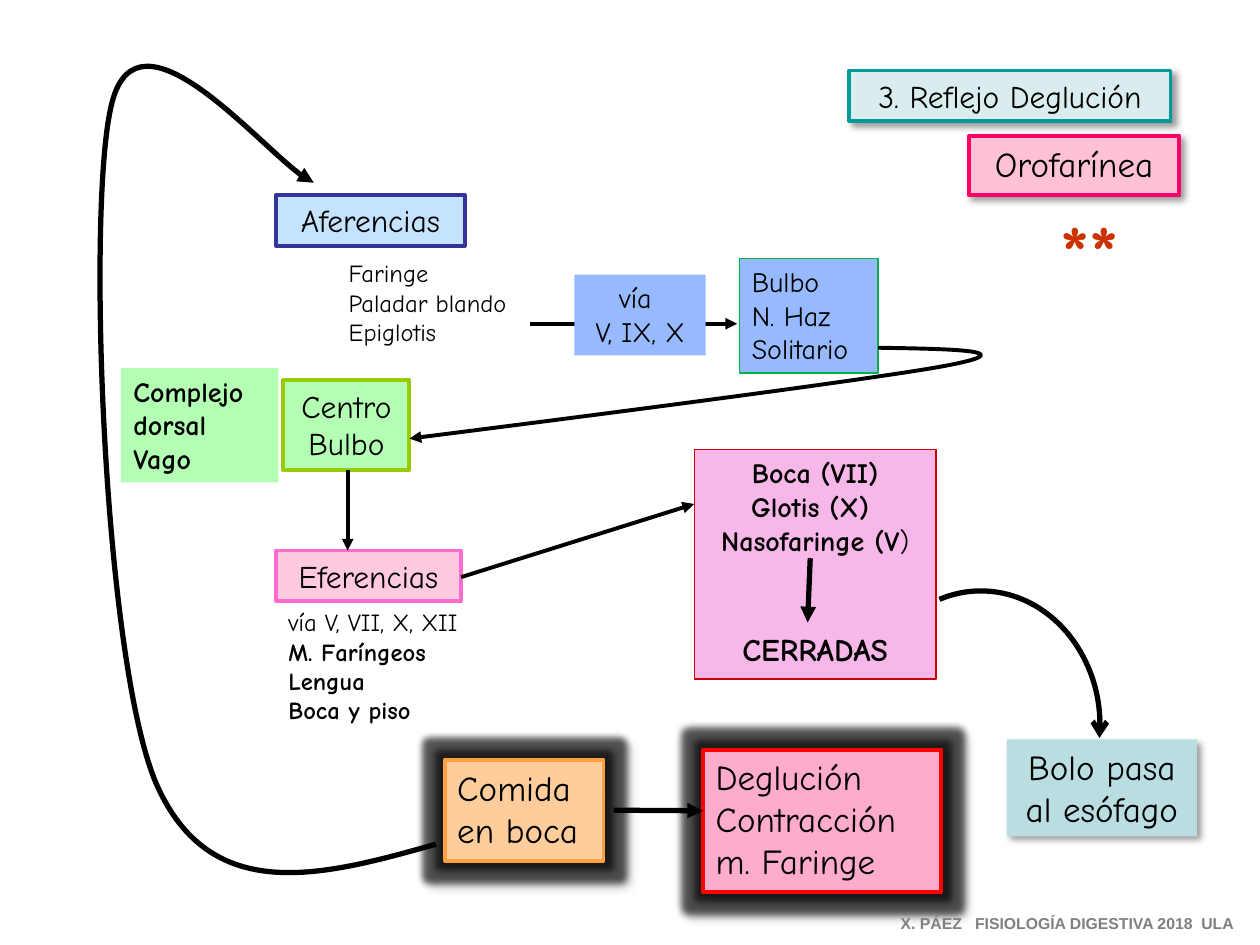
import pptx
import pptx.dml.color
import pptx.enum.dml
import pptx.enum.shapes
import pptx.enum.text
import pptx.oxml
import pptx.oxml.ns
import pptx.util

Pt = pptx.util.Pt
RGBColor = pptx.dml.color.RGBColor
qn = pptx.oxml.ns.qn
SHAPES = pptx.enum.shapes.MSO_SHAPE
LEFT = pptx.enum.text.PP_ALIGN.LEFT
CENTER = pptx.enum.text.PP_ALIGN.CENTER

BLACK = RGBColor(0x00, 0x00, 0x00)
GRAY = RGBColor(0x80, 0x80, 0x80)
RED = RGBColor(0xFF, 0x00, 0x00)
DARK_RED = RGBColor(0xCC, 0x00, 0x00)
BRICK = RGBColor(0xCC, 0x33, 0x00)
TEAL = RGBColor(0x00, 0x99, 0x99)
PALE_TEAL = RGBColor(0xD9, 0xED, 0xEF)
AQUA = RGBColor(0xBA, 0xDD, 0xE1)
NAVY = RGBColor(0x33, 0x33, 0x99)
PALE_BLUE = RGBColor(0xC5, 0xE2, 0xFF)
BLUE = RGBColor(0x97, 0xBA, 0xFF)
GREEN = RGBColor(0x00, 0xB0, 0x50)
LIME = RGBColor(0x99, 0xCC, 0x00)
PALE_GREEN = RGBColor(0xB3, 0xFF, 0xB3)
ORANGE = RGBColor(0xFF, 0xA1, 0x43)
PALE_ORANGE = RGBColor(0xFF, 0xCD, 0x9B)
MAGENTA = RGBColor(0xFF, 0x00, 0x66)
ROSE = RGBColor(0xFF, 0xC1, 0xD6)
ORCHID = RGBColor(0xFF, 0x6B, 0xCE)
PALE_PINK = RGBColor(0xFF, 0xC9, 0xDF)
PINK = RGBColor(0xFF, 0xAB, 0xCD)
LILAC = RGBColor(0xF7, 0xB7, 0xE9)

NAMESPACE = 'xmlns:a="http://schemas.openxmlformats.org/drawingml/2006/main"'
SHADOW = (f'<a:outerShdw {NAMESPACE} blurRad="50800" dist="38100" dir="2700000">'
          '<a:srgbClr val="000000"><a:alpha val="40000"/></a:srgbClr></a:outerShdw>')
GLOW = (f'<a:glow {NAMESPACE} rad="101600"><a:srgbClr val="000000">'
        '<a:alpha val="60000"/></a:srgbClr></a:glow>')
TEXT_SHADOW = (f'<a:effectLst {NAMESPACE}><a:outerShdw blurRad="38100" dist="38100" '
               'dir="2700000"><a:srgbClr val="000000"/></a:outerShdw></a:effectLst>')

presentation = pptx.Presentation()
presentation.slide_width = Pt(720)
presentation.slide_height = Pt(540)
slide = presentation.slides.add_slide(presentation.slide_layouts[6])


def add_text(text, place, size, align=CENTER, fill=None, line=None, width=2.25,
             effects=(), wrap=False, bold_from=None, color=BLACK, font="Comic Neue"):
    """Add a box; lines of text from number bold_from on are bold."""
    place = [Pt(length) for length in place]
    if fill is None:
        shape = slide.shapes.add_textbox(*place)
    else:
        shape = slide.shapes.add_shape(SHAPES.RECTANGLE, *place)
        shape.shadow.inherit = False
        shape.fill.solid()
        shape.fill.fore_color.rgb = fill
        if line is None:
            shape.line.fill.background()
        else:
            shape.line.color.rgb = line
            shape.line.width = Pt(width)
        effect_list = shape._element.spPr.find(qn("a:effectLst"))
        for effect in effects:
            effect_list.append(pptx.oxml.parse_xml(effect))
    frame = shape.text_frame
    frame.word_wrap = wrap
    frame.auto_size = pptx.enum.text.MSO_AUTO_SIZE.SHAPE_TO_FIT_TEXT
    frame.vertical_anchor = pptx.enum.text.MSO_ANCHOR.TOP
    for number, words in enumerate(text.split("\n")):
        paragraph = frame.paragraphs[0] if number == 0 else frame.add_paragraph()
        paragraph.alignment = align
        run = paragraph.add_run()
        run.text = words
        run.font.size = Pt(size)
        run.font.name = font
        run.font.bold = bold_from is not None and number >= bold_from
        run.font.color.rgb = color
    return shape


def style_arrow(shape, width, head="triangle"):
    """Give a line, curve or arc a black stroke with a head at its end."""
    shape.line.color.rgb = BLACK
    shape.line.width = Pt(width)
    shape.line._get_or_add_ln().append(
        pptx.oxml.parse_xml(f'<a:tailEnd {NAMESPACE} type="{head}"/>'))
    properties = shape._element.spPr
    if properties.find(qn("a:effectLst")) is None:
        properties.append(pptx.oxml.parse_xml(f"<a:effectLst {NAMESPACE}/>"))


# Titles
add_text("3. Reflejo Deglución", (485.3, 40.3, 183.6, 28.8), 18,
         fill=PALE_TEAL, line=TEAL, effects=[SHADOW])
add_text("Orofarínea", (553.7, 77.8, 120.2, 33.8), 20,
         fill=ROSE, line=MAGENTA, effects=[SHADOW])
stars = add_text("**", (581.8, 113, 81.4, 60.5), 44, wrap=True, bold_from=0, color=BRICK)
star_font = stars.text_frame.paragraphs[0].runs[0]._r.rPr
star_font.find(qn("a:solidFill")).addnext(pptx.oxml.parse_xml(TEXT_SHADOW))

# Afferent side
add_text("Aferencias", (157.7, 111.6, 108, 28.8), 18, fill=PALE_BLUE, line=NAVY)
add_text("Faringe\nPaladar blando\nEpiglotis", (192.2, 144, 109.4, 58.3), 14, align=LEFT)
add_text("Bulbo\nN. Haz Solitario", (422.6, 147.6, 79.2, 65.5), 16, align=LEFT,
         fill=BLUE, line=GREEN, width=0.75, wrap=True)

# Centre
add_text("Complejo\ndorsal\nVago", (69.1, 210.2, 90, 65.5), 16, align=LEFT,
         fill=PALE_GREEN, bold_from=0)
add_text("Centro\nBulbo", (162, 217.4, 72, 51.1), 18, fill=PALE_GREEN, line=LIME)

# Efferent side
add_text("Eferencias", (157.7, 314.6, 105.8, 28.8), 18, fill=PALE_PINK, line=ORCHID)
add_text("vía V, VII, X, XII\nM. Faríngeos\nLengua\nBoca y piso",
         (157.7, 343.4, 129.6, 74.2), 14, align=LEFT, bold_from=1)

# Closed passages
closed = add_text("Boca (VII)\nGlotis (X) \nNasofaringe (V\nCERRADAS",
                  (396.7, 257, 138.2, 131), 16, fill=LILAC, line=DARK_RED,
                  width=0.75, bold_from=0)
nasopharynx, result = closed.text_frame.paragraphs[2:]
bracket = nasopharynx.add_run()
bracket.text = ")"
bracket.font.size = Pt(16)
bracket.font.name = "Comic Neue"
bracket.font.color.rgb = BLACK
result.space_before = Pt(42)
result.runs[0].font.size = Pt(18)

# Swallowing
add_text("Comida\nen boca", (254.2, 434.2, 90.7, 57.6), 20, align=LEFT, wrap=True,
         fill=PALE_ORANGE, line=ORANGE, effects=[GLOW, SHADOW])
add_text("Deglución\nContracción\nm. Faringe", (401.8, 428.4, 136.1, 81.4), 20,
         align=LEFT, wrap=True, fill=PINK, line=RED, effects=[GLOW, SHADOW])
add_text("Bolo pasa\nal esófago", (575.3, 422.6, 108.7, 55.4), 20,
         fill=AQUA, effects=[SHADOW])

# Straight arrows: start, end, width
for start_x, start_y, end_x, end_y, width in [
    (463, 319, 461.5, 355.7, 3),
    (350.6, 463, 401.8, 463.3, 3),
    (198.7, 268.5, 198.7, 314.6, 2.25),
    (303.1, 185, 421.2, 185, 2.25),
    (263.5, 329.8, 396.7, 288, 2.25),
]:
    arrow = slide.shapes.add_connector(
        pptx.enum.shapes.MSO_CONNECTOR.STRAIGHT,
        Pt(start_x), Pt(start_y), Pt(end_x), Pt(end_y))
    style_arrow(arrow, width)

# Curved arrows: a start point, then three points for each cubic segment
for points, width in [
    ([(249.1, 482.4), (185, 500.4), (120.2, 518.4), (89.3, 447.8), (59, 377.3),
      (49, 115.2), (64.1, 58.3), (79.2, 0.7), (159.8, 97.2), (179.3, 104.4)], 3),
    ([(501.8, 198.7), (544.3, 199.4), (586.1, 200.2), (541.4, 208.8), (496.8, 217.4),
      (234, 250.6), (234, 250.6)], 2.25),
]:
    points = [(Pt(x), Pt(y)) for x, y in points]
    builder = slide.shapes.build_freeform(*points[0])
    builder.add_line_segments(points[1:], close=False)
    curve = builder.convert_to_shape()
    curve.shadow.inherit = False
    curve.fill.background()
    segments = list(curve._element.iter(qn("a:lnTo")))
    for first in range(0, len(segments), 3):
        cubic = pptx.oxml.parse_xml(f"<a:cubicBezTo {NAMESPACE}/>")
        segments[first].addprevious(cubic)
        for segment in segments[first:first + 3]:
            cubic.append(segment[0])
            segment.getparent().remove(segment)
    style_arrow(curve, width)

# Arc to the oesophagus
arc = slide.shapes.add_shape(SHAPES.ARC, Pt(492.5), Pt(337.7), Pt(136.1), Pt(154.1))
arc.adjustments[0] = 151.09
arc.adjustments[1] = 3.54
arc.shadow.inherit = False
arc.fill.background()
style_arrow(arc, 3, head="arrow")

# Pathway box over its arrow, and footer
add_text("vía \nV, IX, X", (328.3, 157, 74.9, 46.1), 16, fill=BLUE)
add_text("X. PÁEZ   FISIOLOGÍA DIGESTIVA 2018  ULA", (507.6, 518.4, 205.9, 18), 9,
         align=LEFT, bold_from=0, color=GRAY, font="Arial")

presentation.save("out.pptx")
